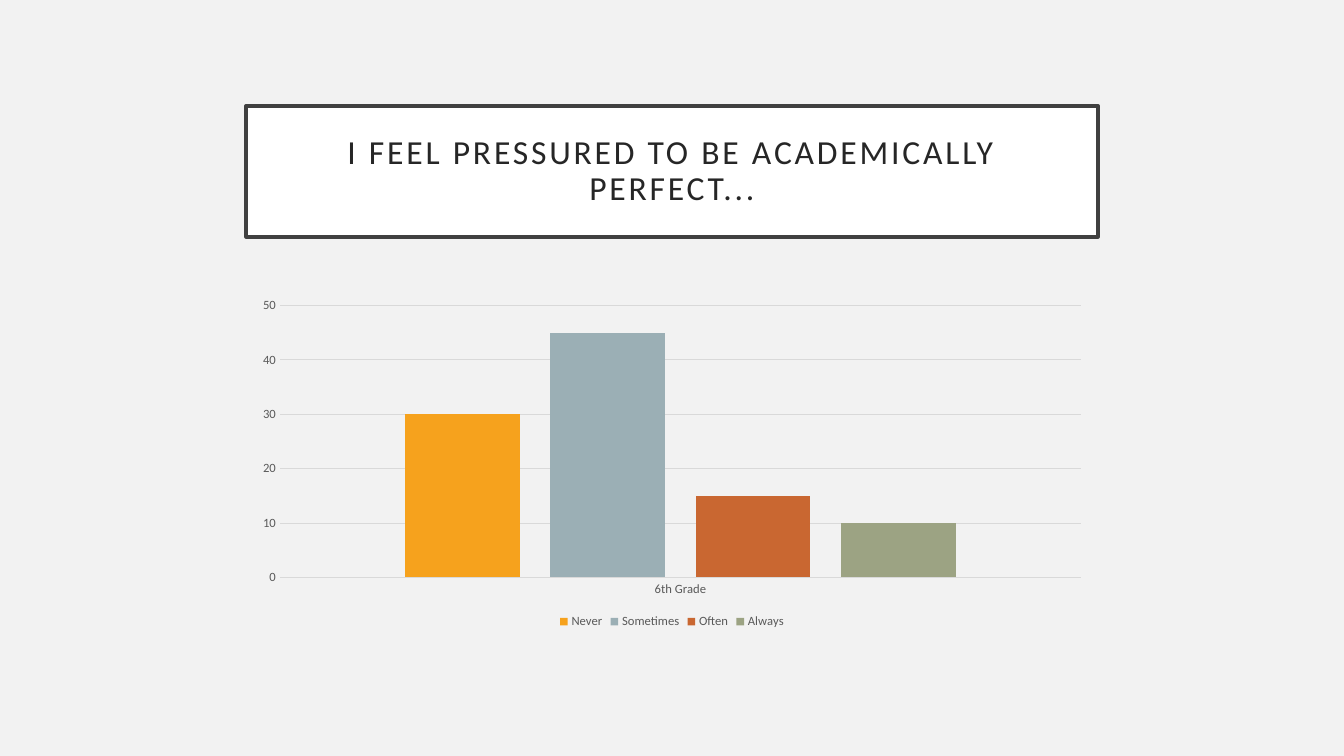
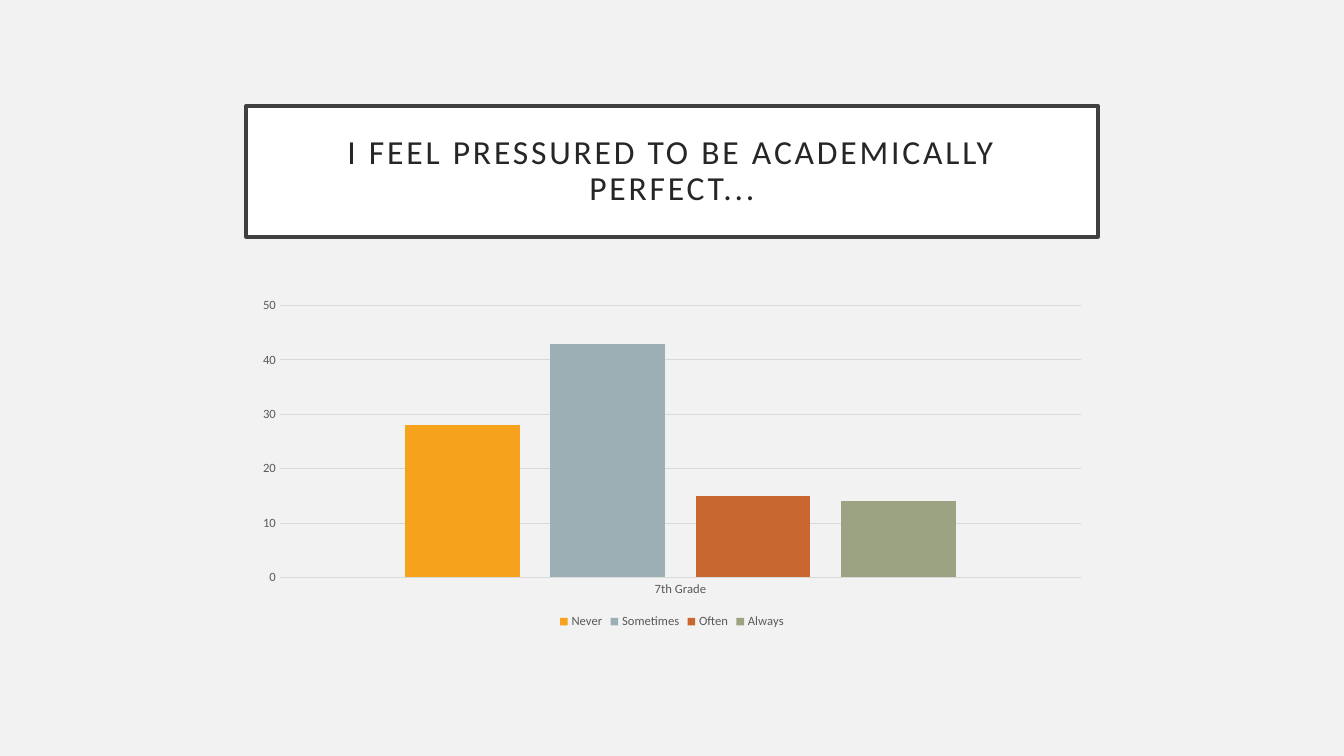
from dataclasses import dataclass

from pptx import Presentation
from pptx.chart.data import CategoryChartData as ChartData
from pptx.dml.color import RGBColor as Color
from pptx.enum.chart import XL_CHART_TYPE as ChartType
from pptx.enum.chart import XL_LEGEND_POSITION as LegendPosition
from pptx.enum.chart import XL_TICK_MARK as TickMark
from pptx.enum.text import MSO_ANCHOR as Anchor
from pptx.enum.text import MSO_AUTO_SIZE as AutoSize
from pptx.enum.text import PP_ALIGN as Align
from pptx.util import Inches, Pt


@dataclass(frozen=True)
class Theme:
    font: str = "Calibri"
    background: str = "F2F2F2"
    title_fill: str = "FFFFFF"
    title_border: str = "404040"
    title_text: str = "262626"
    chart_text: str = "595959"
    grid: str = "D9D9D9"
    answers: tuple = ("F6A21D", "9BAFB5", "C96731", "9CA383")
    title_size: float = 24
    chart_size: float = 9
    border_width: float = 2.5
    grid_width: float = 0.75
    letter_spacing: float = 2


THEME = Theme()
TITLE_BOX = (2.44, 1.05, 8.45, 1.3)
CHART_BOX = (2.44, 2.89, 8.45, 3.39)
QUESTION = "I FEEL PRESSURED TO BE ACADEMICALLY PERFECT..."
ANSWERS = ("Never", "Sometimes", "Often", "Always")
RESULTS = {
    "6th Grade": (30, 45, 15, 10),
    "7th Grade": (28, 43, 15, 14),
}


def paint(fill, color):
    fill.solid()
    fill.fore_color.rgb = Color.from_string(color)


def draw_line(line, color, width):
    paint(line.fill, color)
    line.width = Pt(width)


def style_font(font, size, color):
    font.name = THEME.font
    font.size = Pt(size)
    font.color.rgb = Color.from_string(color)


def place_title(page, box, text):
    title = page.shapes.title
    title.left, title.top, title.width, title.height = map(Inches, box)
    paint(title.fill, THEME.title_fill)
    draw_line(title.line, THEME.title_border, THEME.border_width)
    frame = title.text_frame
    frame.text = text
    frame.word_wrap = True
    frame.auto_size = AutoSize.NONE
    frame.vertical_anchor = Anchor.MIDDLE
    frame.margin_left = frame.margin_right = Inches(0.2)
    frame.margin_top = frame.margin_bottom = Inches(0.2)
    para = frame.paragraphs[0]
    para.alignment = Align.CENTER
    para.line_spacing = 0.9
    span = para.runs[0]
    style_font(span.font, THEME.title_size, THEME.title_text)
    span._r.get_or_add_rPr().set("spc", str(THEME.letter_spacing * 100))


def style_axes(chart):
    for axis in (chart.category_axis, chart.value_axis):
        axis.major_tick_mark = axis.minor_tick_mark = TickMark.NONE
        style_font(axis.tick_labels.font, THEME.chart_size, THEME.chart_text)
    draw_line(chart.category_axis.format.line, THEME.grid, THEME.grid_width)
    scale = chart.value_axis
    scale.minimum_scale, scale.maximum_scale, scale.major_unit = 0, 50, 10
    scale.format.line.fill.background()
    scale.has_major_gridlines = True
    draw_line(scale.major_gridlines.format.line, THEME.grid, THEME.grid_width)


def place_chart(page, box, grade, shares):
    data = ChartData()
    data.categories = [grade]
    for answer, share in zip(ANSWERS, shares):
        data.add_series(answer, [share])
    chart = page.shapes.add_chart(
        ChartType.COLUMN_CLUSTERED, *map(Inches, box), data
    ).chart
    style_font(chart.font, THEME.chart_size, THEME.chart_text)
    chart.has_title = False
    style_axes(chart)
    chart.has_legend = True
    chart.legend.position = LegendPosition.BOTTOM
    chart.legend.include_in_layout = False
    style_font(chart.legend.font, THEME.chart_size, THEME.chart_text)
    plot = chart.plots[0]
    plot.vary_by_categories = False
    plot.gap_width = 219
    plot.overlap = -27
    for series, color in zip(plot.series, THEME.answers):
        paint(series.format.fill, color)
        series.invert_if_negative = False


def add_survey_page(deck, grade, shares):
    page = deck.slides.add_slide(deck.slide_layouts.get_by_name("Title Only"))
    place_title(page, TITLE_BOX, QUESTION)
    place_chart(page, CHART_BOX, grade, shares)


def main():
    deck = Presentation()
    deck.slide_width, deck.slide_height = Inches(13.33), Inches(7.5)
    paint(deck.slide_master.background.fill, THEME.background)
    for grade, shares in RESULTS.items():
        add_survey_page(deck, grade, shares)
    deck.save("out.pptx")


if __name__ == "__main__":
    main()
